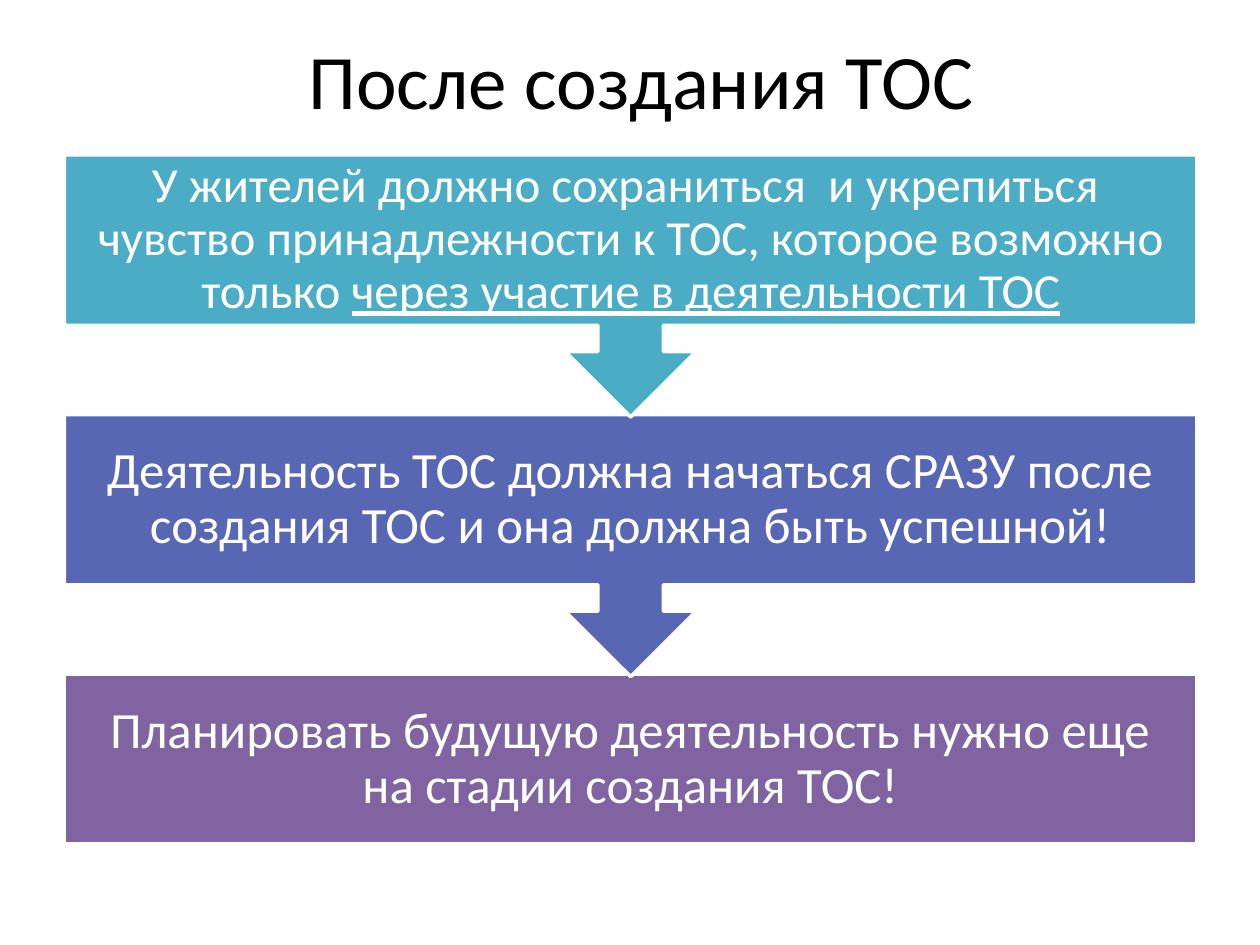
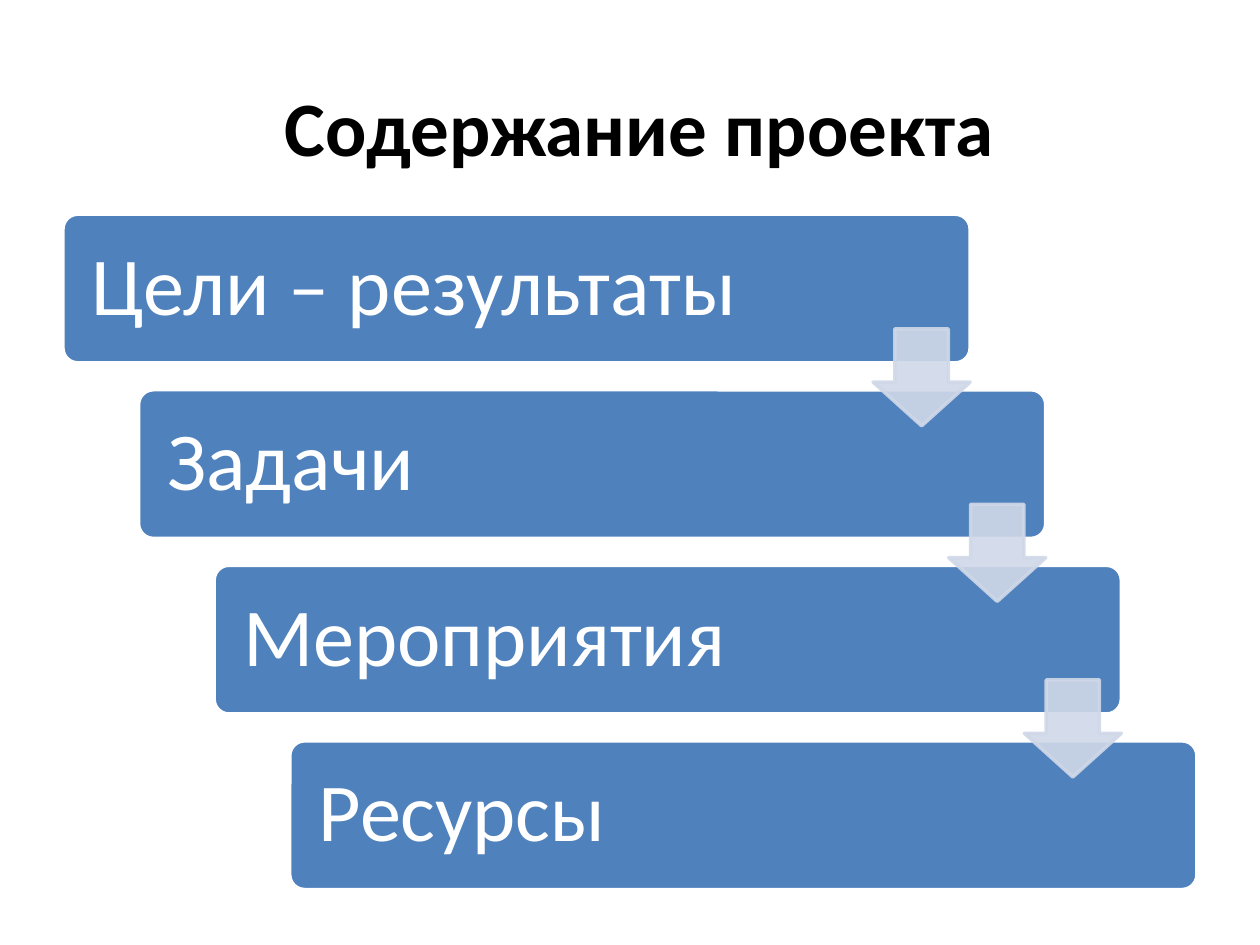
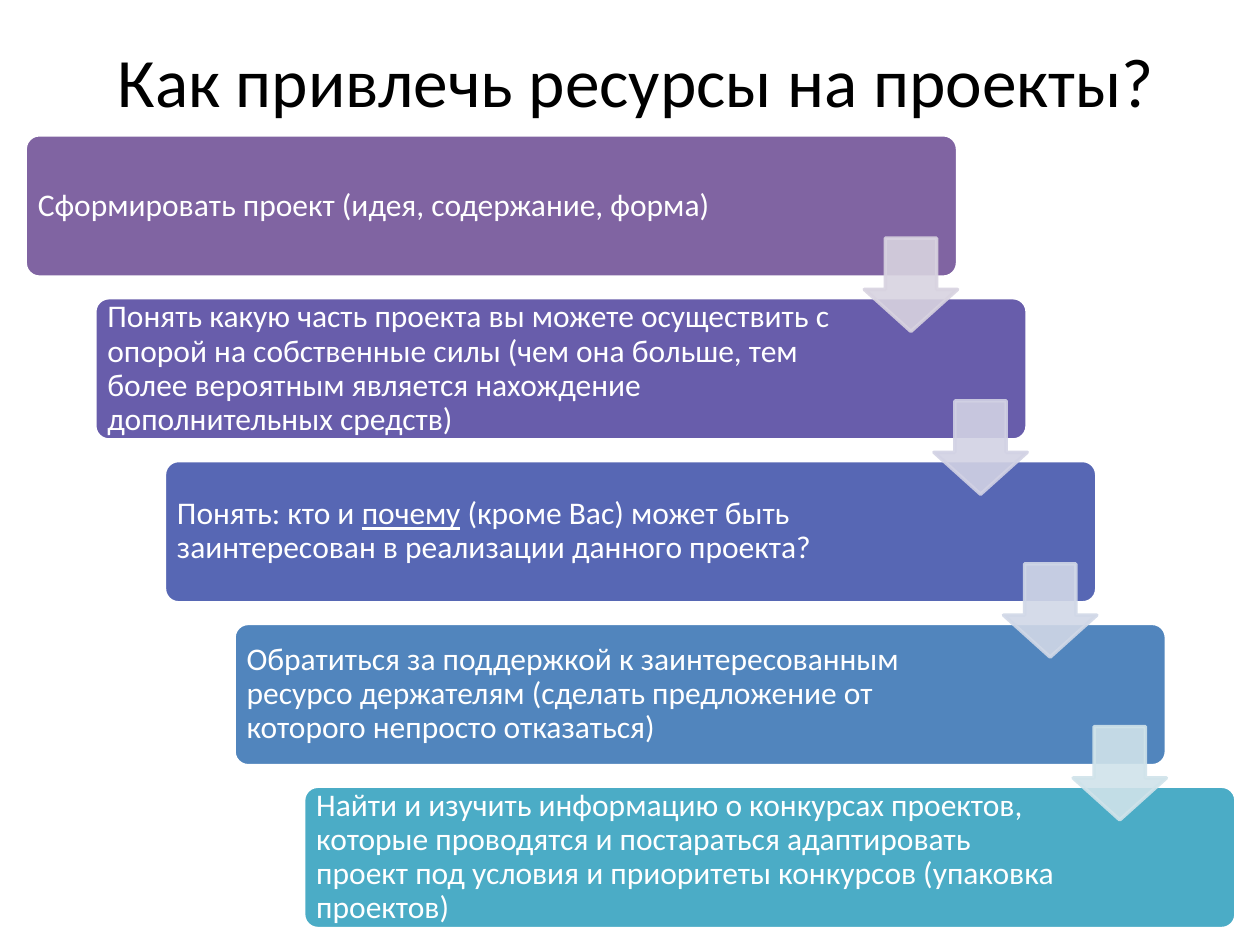
from dataclasses import dataclass

from lxml import etree
from pptx import Presentation
from pptx.dml.color import RGBColor
from pptx.enum import shapes, text
from pptx.oxml.ns import qn
from pptx.util import Inches, Pt


@dataclass(frozen=True)
class Theme:
    font: str = "Calibri"
    ink: str = "000000"
    paper: str = "FFFFFF"
    teal: str = "4BACC6"
    indigo: str = "5767B4"
    purple: str = "8064A2"
    violet: str = "685DAB"
    steel: str = "5185BD"
    blue: str = "4F81BD"
    pale_blue: str = "D0D8E8"
    pale_purple: str = "D8D3E0"
    pale_violet: str = "D2D2E4"
    pale_indigo: str = "D1D8E7"
    pale_teal: str = "D0E3EA"
    title_size: float = 44
    long_title_size: float = 39.6
    goal_size: float = 47
    advice_size: float = 29
    long_advice_size: float = 28
    step_size: float = 18
    outline: float = 2
    arrow_opacity: int = 90


THEME = Theme()
MARK = "|"  # encloses underlined words


def add_words(slide, words, box, size, color=THEME.paper, inset=0.1,
              align=text.PP_ALIGN.LEFT, bold=False, spacing=0.9):
    """Add middle-anchored text."""
    frame = slide.shapes.add_textbox(*map(Inches, box)).text_frame
    margins = {f"margin_{side}": Inches(inset)
               for side in ("left", "top", "right", "bottom")}
    settings = {"word_wrap": True, "vertical_anchor": text.MSO_ANCHOR.MIDDLE, **margins}
    for key, value in settings.items():
        setattr(frame, key, value)
    paragraph = frame.paragraphs[0]
    paragraph.alignment = align
    paragraph.line_spacing = spacing
    for index, part in enumerate(words.split(MARK)):
        run = paragraph.add_run()
        run.text = part
        run.font.color.rgb = RGBColor.from_string(color)
        style = {"name": THEME.font, "size": Pt(size), "bold": bold,
                 "underline": index % 2 == 1}
        for key, value in style.items():
            setattr(run.font, key, value)


def add_title(slide, words, box, size=THEME.title_size, bold=False):
    add_words(slide, words, box, size, THEME.ink, align=text.PP_ALIGN.CENTER,
              bold=bold, spacing=1.0)


def add_block(slide, kind, box, fill, line=THEME.paper, adjustments=()):
    block = slide.shapes.add_shape(kind, *map(Inches, box))
    block.shadow.inherit = False
    block.fill.solid()
    block.fill.fore_color.rgb = RGBColor.from_string(fill)
    block.line.color.rgb = RGBColor.from_string(line)
    block.line.width = Pt(THEME.outline)
    for index, value in enumerate(adjustments):
        block.adjustments[index] = value
    return block


def add_pale_arrow(slide, left, top, side, color):
    """Add a translucent down arrow."""
    arrow = add_block(slide, shapes.MSO_SHAPE.DOWN_ARROW, (left, top, side, side),
                      color, color, (0.55, 0.45))
    for tint in arrow.element.spPr.iter(qn("a:srgbClr")):
        etree.SubElement(tint, qn("a:alpha")).set("val", str(THEME.arrow_opacity * 1000))


def add_callout_flow(slide, advice):
    """Stack full-width blocks, each but the last pointing at the next."""
    left, top, width, pitch = 0.51, 1.23, 8.99, 2.06
    body_height, callout_height = 1.35, 2.08
    # Lower blocks go behind the arrow tips of the upper ones
    for index, (words, color, size) in reversed(list(enumerate(advice))):
        y = top + index * pitch
        body = (left, y, width, body_height)
        if index == len(advice) - 1:
            add_block(slide, shapes.MSO_SHAPE.RECTANGLE, body, color)
        else:
            callout = add_block(slide, shapes.MSO_SHAPE.UP_ARROW_CALLOUT,
                                (left, y, width, callout_height), color)
            callout.rotation = 180
        add_words(slide, words, body, size, inset=0.22, align=text.PP_ALIGN.CENTER)


def add_staircase(slide, steps, arrow_colors, first, last, step_size, label_width,
                  font_size, inset, arrow_side, arrow_drop):
    """Spread blocks evenly from first to last corner, joined by arrows."""
    width, height = step_size
    edge = 0.03
    run, rise = ((end - start) / (len(steps) - 1) for start, end in zip(first, last))
    corners = [(first[0] + i * run, first[1] + i * rise) for i in range(len(steps))]
    for (x, y), (words, color) in zip(corners, steps):
        add_block(slide, shapes.MSO_SHAPE.ROUNDED_RECTANGLE, (x, y, width, height),
                  color, adjustments=(0.1,))
        add_words(slide, words, (x + edge, y + edge, label_width, height - 2 * edge),
                  font_size, inset=inset)
    for (x, y), color in zip(corners, arrow_colors):
        add_pale_arrow(slide, x + width - arrow_side, y + arrow_drop, arrow_side, color)


def build_after_creation(slide):
    add_title(slide, "После создания ТОС", (0.59, 0, 9, 1.25))
    add_callout_flow(slide, [
        ("У жителей должно сохраниться  и укрепиться  чувство принадлежности к ТОС, "
         "которое возможно только |через участие в деятельности ТОС|",
         THEME.teal, THEME.long_advice_size),
        ("Деятельность ТОС должна начаться СРАЗУ после создания ТОС и она должна "
         "быть успешной!", THEME.indigo, THEME.advice_size),
        ("Планировать будущую деятельность нужно еще на стадии создания ТОС!",
         THEME.purple, THEME.advice_size),
    ])


def build_project_content(slide):
    add_title(slide, "Содержание проекта", (0.35, 0.29, 9.45, 1.41), bold=True)
    goals = ["Цели – результаты", "Задачи", "Мероприятия", "Ресурсы"]
    add_staircase(slide, [(goal, THEME.blue) for goal in goals],
                  [THEME.pale_blue] * (len(goals) - 1),
                  first=(0.5, 1.7), last=(2.3, 5.88), step_size=(7.2, 1.18),
                  label_width=5.8, font_size=THEME.goal_size, inset=0.2,
                  arrow_side=0.77, arrow_drop=0.91)


def build_resources(slide):
    add_title(slide, "Как привлечь ресурсы на проекты?", (0.43, 0.13, 9.24, 1.01),
              THEME.long_title_size)
    steps = [
        ("Сформировать проект (идея, содержание, форма)", THEME.purple),
        ("Понять какую часть проекта вы можете осуществить с опорой на собственные "
         "силы (чем она больше, тем более вероятным является нахождение "
         "дополнительных средств)", THEME.violet),
        ("Понять: кто и |почему| (кроме Вас) может быть заинтересован в реализации "
         "данного проекта?", THEME.indigo),
        ("Обратиться за поддержкой к заинтересованным ресурсо держателям (сделать "
         "предложение от которого непросто отказаться)", THEME.steel),
        ("Найти и изучить информацию о конкурсах проектов, которые проводятся и "
         "постараться адаптировать проект под условия и приоритеты конкурсов "
         "(упаковка проектов)", THEME.teal),
    ]
    arrow_colors = [THEME.pale_purple, THEME.pale_violet, THEME.pale_indigo,
                    THEME.pale_teal]
    add_staircase(slide, steps, arrow_colors,
                  first=(0.2, 1.07), last=(2.41, 6.24), step_size=(7.4, 1.13),
                  label_width=6.04, font_size=THEME.step_size, inset=0.07,
                  arrow_side=0.74, arrow_drop=0.82)


def main():
    deck = Presentation()
    deck.slide_width, deck.slide_height = Inches(10), Inches(7.5)
    blank = deck.slide_layouts[6]
    for build in (build_after_creation, build_project_content, build_resources):
        build(deck.slides.add_slide(blank))
    deck.save("out.pptx")


if __name__ == "__main__":
    main()
